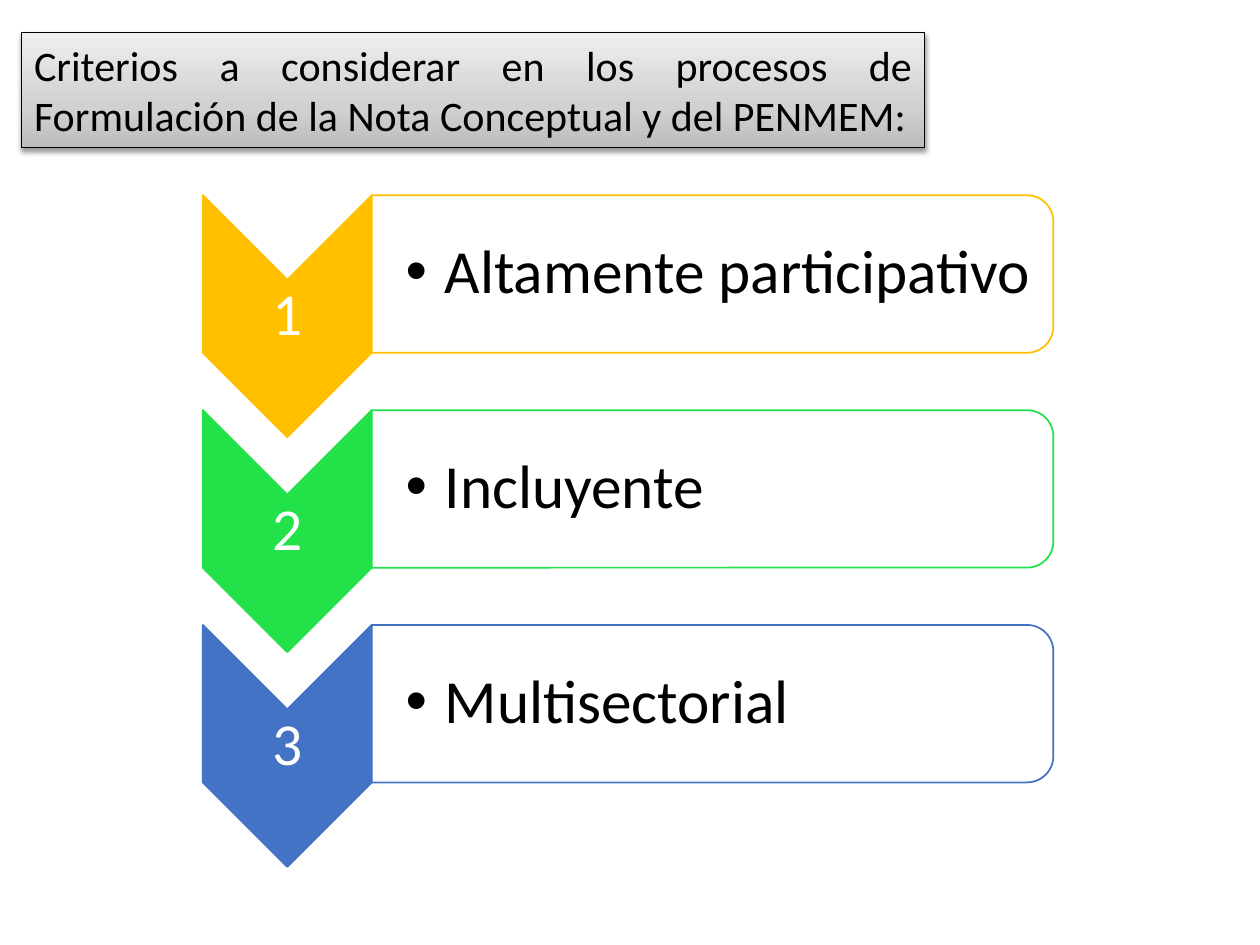
from dataclasses import dataclass

from lxml.etree import SubElement
from pptx import Presentation
from pptx.dml.color import RGBColor
from pptx.enum.shapes import MSO_SHAPE
from pptx.enum.text import MSO_ANCHOR, MSO_AUTO_SIZE, PP_ALIGN
from pptx.oxml import parse_xml
from pptx.oxml.ns import nsdecls, qn
from pptx.util import Inches, Pt


@dataclass(frozen=True)
class Theme:
    font: str = "Calibri"
    dark: str = "000000"
    light: str = "FFFFFF"
    gradient: tuple = ((0, "BDBDBD"), (35, "D1D1D1"), (100, "EEEEEE"))
    accents: tuple = ("FFC000", "23E148", "4472C4")
    title_size: int = 24
    number_size: int = 34
    criterion_size: int = 35


THEME = Theme()
CRITERIA = ("Altamente participativo", "Incluyente", "Multisectorial")


def format_font(paragraph, size, color):
    for run in paragraph.runs:
        run.font.name = THEME.font
        run.font.size = Pt(size)
        run.font.color.rgb = RGBColor.from_string(color)


def set_margins(text_frame, left, top, right, bottom):
    text_frame.margin_left = Inches(left)
    text_frame.margin_top = Inches(top)
    text_frame.margin_right = Inches(right)
    text_frame.margin_bottom = Inches(bottom)


def add_title(slide, left, top, width, height):
    title = slide.shapes.title
    title.left, title.top = Inches(left), Inches(top)
    title.width, title.height = Inches(width), Inches(height)
    properties = title.element.spPr
    stops = "".join(
        f'<a:gs pos="{position * 1000}"><a:srgbClr val="{color}"/></a:gs>'
        for position, color in THEME.gradient
    )
    properties.append(parse_xml(
        f'<a:gradFill {nsdecls("a")} rotWithShape="1"><a:gsLst>{stops}</a:gsLst>'
        '<a:lin ang="16200000" scaled="1"/></a:gradFill>'
    ))
    title.line.color.rgb = RGBColor.from_string(THEME.dark)
    title.line.width = Pt(0.75)
    properties.append(parse_xml(
        f'<a:effectLst {nsdecls("a")}><a:outerShdw blurRad="{Pt(3.1)}" '
        f'dist="{Pt(1.6)}" dir="5400000" rotWithShape="0">'
        f'<a:srgbClr val="{THEME.dark}"><a:alpha val="38000"/></a:srgbClr>'
        '</a:outerShdw></a:effectLst>'
    ))
    text_frame = title.text_frame
    text_frame.text = (
        "Criterios a considerar en los procesos de Formulación de la "
        "Nota Conceptual y del PENMEM:"
    )
    text_frame.word_wrap = True
    text_frame.auto_size = MSO_AUTO_SIZE.NONE
    text_frame.vertical_anchor = MSO_ANCHOR.TOP
    set_margins(text_frame, 0.1, 0.05, 0.1, 0.05)
    paragraph = text_frame.paragraphs[0]
    paragraph.alignment = PP_ALIGN.JUSTIFY
    format_font(paragraph, THEME.title_size, THEME.dark)


def add_turned_shape(slide, kind, left, top, width, height, fill, line):
    shape = slide.shapes.add_shape(
        kind,
        Inches(left + (width - height) / 2),
        Inches(top + (height - width) / 2),
        Inches(height),
        Inches(width),
    )
    shape.rotation = 90
    shape.shadow.inherit = False
    shape.fill.solid()
    shape.fill.fore_color.rgb = RGBColor.from_string(fill)
    shape.line.color.rgb = RGBColor.from_string(line)
    shape.line.width = Pt(1)
    return shape


def add_label(slide, text, left, top, width, height, margin_left=0.02):
    box = slide.shapes.add_textbox(
        Inches(left), Inches(top), Inches(width), Inches(height)
    )
    text_frame = box.text_frame
    text_frame.word_wrap = True
    text_frame.vertical_anchor = MSO_ANCHOR.MIDDLE
    set_margins(text_frame, margin_left, 0.02, 0.02, 0.02)
    paragraph = text_frame.paragraphs[0]
    paragraph.text = text
    paragraph.line_spacing = 0.9
    return paragraph


def add_bullet(paragraph, indent):
    properties = paragraph._p.get_or_add_pPr()
    properties.set("marL", str(Inches(indent)))
    properties.set("indent", str(-Inches(indent)))
    SubElement(properties, qn("a:buFont"), typeface="Arial")
    SubElement(properties, qn("a:buChar"), char="•")


def add_criterion(slide, number, text, color, left, top, width, height):
    chevron_width, panel_height = 1.34, 1.25
    point = chevron_width / 2
    panel_left = left + chevron_width
    panel_width = width - chevron_width

    add_turned_shape(slide, MSO_SHAPE.CHEVRON, left, top, chevron_width, height,
                     color, color)
    label = add_label(slide, str(number), left, top + point, chevron_width,
                      height - 2 * point)
    label.alignment = PP_ALIGN.CENTER
    format_font(label, THEME.number_size, THEME.light)

    panel = add_turned_shape(slide, MSO_SHAPE.ROUND_2_SAME_RECTANGLE, panel_left,
                             top, panel_width, panel_height, THEME.light, color)
    fill_color = panel.element.spPr.find(qn("a:solidFill"))[0]
    SubElement(fill_color, qn("a:alpha"), val="90000")
    label = add_label(slide, text, panel_left, top + 0.06, panel_width - 0.06,
                      panel_height - 0.12, margin_left=0.27)
    add_bullet(label, 0.31)
    format_font(label, THEME.criterion_size, THEME.dark)


def add_criteria(slide, left, top, width, height):
    row_height = 1.92
    pitch = (height - row_height) / (len(CRITERIA) - 1)
    for index, (text, color) in enumerate(zip(CRITERIA, THEME.accents)):
        add_criterion(slide, index + 1, text, color, left, top + index * pitch,
                      width, row_height)


def main():
    presentation = Presentation()
    presentation.slide_width = Inches(10)
    presentation.slide_height = Inches(7.5)
    slide = presentation.slides.add_slide(presentation.slide_layouts[5])
    add_title(slide, 0.17, 0.26, 7.17, 0.91)
    add_criteria(slide, 1.61, 1.55, 6.75, 5.33)
    presentation.save("out.pptx")


if __name__ == "__main__":
    main()
